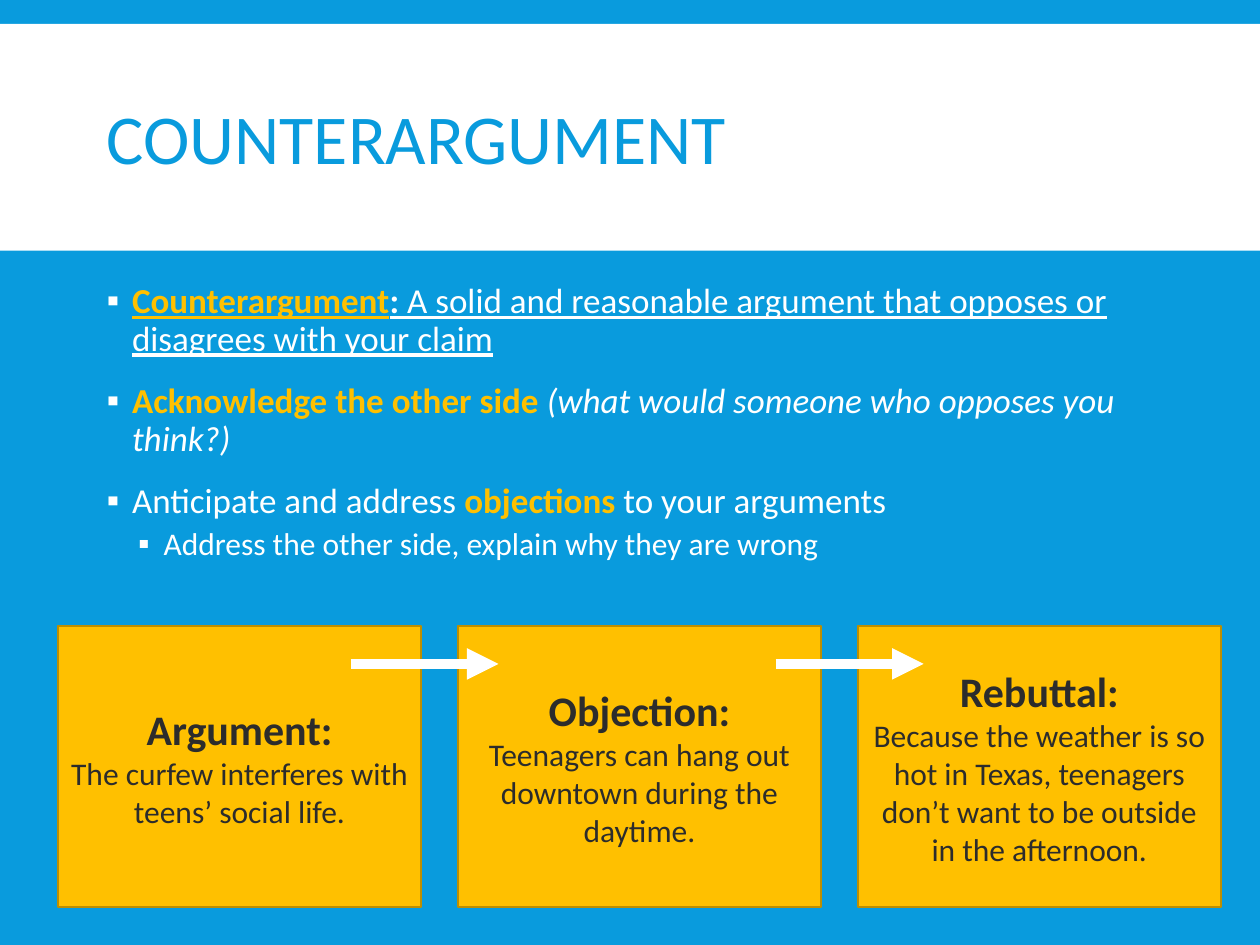
from lxml import etree
from pptx import Presentation
from pptx import util as u
from pptx.dml.color import RGBColor
from pptx.enum import shapes, text
from pptx.oxml import ns

Pt = u.Pt
FONT = "Calibri"
BLUE = RGBColor(0x09, 0x9B, 0xDD)
WHITE = RGBColor(0xFF, 0xFF, 0xFF)
GOLD = RGBColor(0xFF, 0xC0, 0x00)
DARK_GOLD = RGBColor(0xBD, 0x8E, 0x00)
DARK = RGBColor(0x2C, 0x2C, 0x2C)

# Content: spans are (text, styles); b bold, i italic, u underline, g gold
TITLE = "COUNTERARGUMENT"
BULLETS = [
    (0, [("Counterargument", "bug"), (": ", "bu"),
         ("A solid and reasonable argument that opposes or disagrees with your claim", "u")]),
    (0, [("Acknowledge the other side ", "bg"),
         ("(what would someone who opposes you think?)", "i")]),
    (0, [("Anticipate and address ", ""), ("objections ", "bg"),
         ("to your arguments", "")]),
    (1, [("Address the other side, explain why they are wrong", "")]),
]
# Per level: left indent, size, space before, space after
LEVELS = [(14.4, 20, 12, 2), (32.4, 18, 2, 4)]
HANGING = 14.4
STEPS = [
    ("Argument:", "The curfew interferes with teens’ social life."),
    ("Objection:", "Teenagers can hang out downtown during the daytime."),
    ("Rebuttal:", "Because the weather is so hot in Texas, teenagers "
                  "don’t want to be outside in the afternoon."),
]
STEP_LEFT, STEP_TOP, STEP_WIDTH, STEP_HEIGHT, STEP_PITCH = 33.2, 357.8, 207.4, 160.6, 228.5
ARROW_LEFT, ARROW_Y, ARROW_LENGTH, ARROW_PITCH = 200.3, 379.4, 84.5, 243


def add_xml(parent, tag, **attributes):
    return etree.SubElement(parent, ns.qn(tag), attributes)


def style(span, size, color, bold=False):
    span.font.name = FONT
    span.font.size = Pt(size)
    span.font.color.rgb = color
    span.font.bold = bold


def add_rectangle(page, left, top, width, height, color):
    box = page.shapes.add_shape(shapes.MSO_SHAPE.RECTANGLE,
                                Pt(left), Pt(top), Pt(width), Pt(height))
    box.shadow.inherit = False
    box.fill.solid()
    box.fill.fore_color.rgb = color
    box.line.fill.background()
    return box


def add_frame(page, left, top, width, height):
    frame = page.shapes.add_textbox(Pt(left), Pt(top), Pt(width), Pt(height)).text_frame
    frame.word_wrap = True
    return frame


def add_bullet(para, left):
    props = para._p.get_or_add_pPr()
    props.set("marL", str(Pt(left)))
    props.set("indent", str(-Pt(HANGING)))
    add_xml(add_xml(props, "a:buClr"), "a:srgbClr", val=str(WHITE))
    add_xml(props, "a:buFont", typeface=FONT)
    add_xml(props, "a:buChar", char="▪")


def add_title(page):
    add_rectangle(page, 0, 13.7, 720, 129.6, WHITE)
    frame = add_frame(page, 54, 22.3, 612, 118.8)
    frame.vertical_anchor = text.MSO_ANCHOR.MIDDLE
    frame.text = TITLE
    para = frame.paragraphs[0]
    para.line_spacing = 0.85
    style(para.runs[0], 40, BLUE)


def add_bullets(page):
    frame = add_frame(page, 54, 158.4, 612, 180.7)
    for index, (level, spans) in enumerate(BULLETS):
        para = frame.add_paragraph() if index else frame.paragraphs[0]
        left, size, before, after = LEVELS[level]
        para.level = level
        para.line_spacing = 0.9
        para.space_before, para.space_after = Pt(before), Pt(after)
        add_bullet(para, left)
        for words, marks in spans:
            span = para.add_run()
            span.text = words
            style(span, size, GOLD if "g" in marks else WHITE, "b" in marks)
            span.font.italic = "i" in marks
            span.font.underline = "u" in marks


def add_step(page, index, heading, body):
    box = add_rectangle(page, STEP_LEFT + index * STEP_PITCH, STEP_TOP,
                        STEP_WIDTH, STEP_HEIGHT, GOLD)
    box.line.color.rgb = DARK_GOLD
    box.line.width = Pt(1)
    frame = box.text_frame
    frame.word_wrap = True
    frame.vertical_anchor = text.MSO_ANCHOR.MIDDLE
    frame.text = f"{heading}\n{body}"
    for para, size, bold in zip(frame.paragraphs, (24, 18), (True, False)):
        para.alignment = text.PP_ALIGN.CENTER
        style(para.runs[0], size, DARK, bold)


def add_arrow(page, index):
    left = ARROW_LEFT + index * ARROW_PITCH
    arrow = page.shapes.add_connector(shapes.MSO_CONNECTOR.STRAIGHT, Pt(left), Pt(ARROW_Y),
                                      Pt(left + ARROW_LENGTH), Pt(ARROW_Y))
    arrow.line.color.rgb = WHITE
    arrow.line.width = Pt(6)
    add_xml(arrow.line._get_or_add_ln(), "a:tailEnd", type="triangle")
    add_xml(arrow._element.spPr, "a:effectLst")


def main():
    deck = Presentation()
    deck.slide_width, deck.slide_height = Pt(720), Pt(540)
    page = deck.slides.add_slide(deck.slide_layouts[6])
    page.background.fill.solid()
    page.background.fill.fore_color.rgb = BLUE

    add_title(page)
    add_bullets(page)
    # Steps first, so the arrows lie on top
    for index, (heading, body) in enumerate(STEPS):
        add_step(page, index, heading, body)
    for index in range(len(STEPS) - 1):
        add_arrow(page, index)
    deck.save("out.pptx")


if __name__ == "__main__":
    main()
